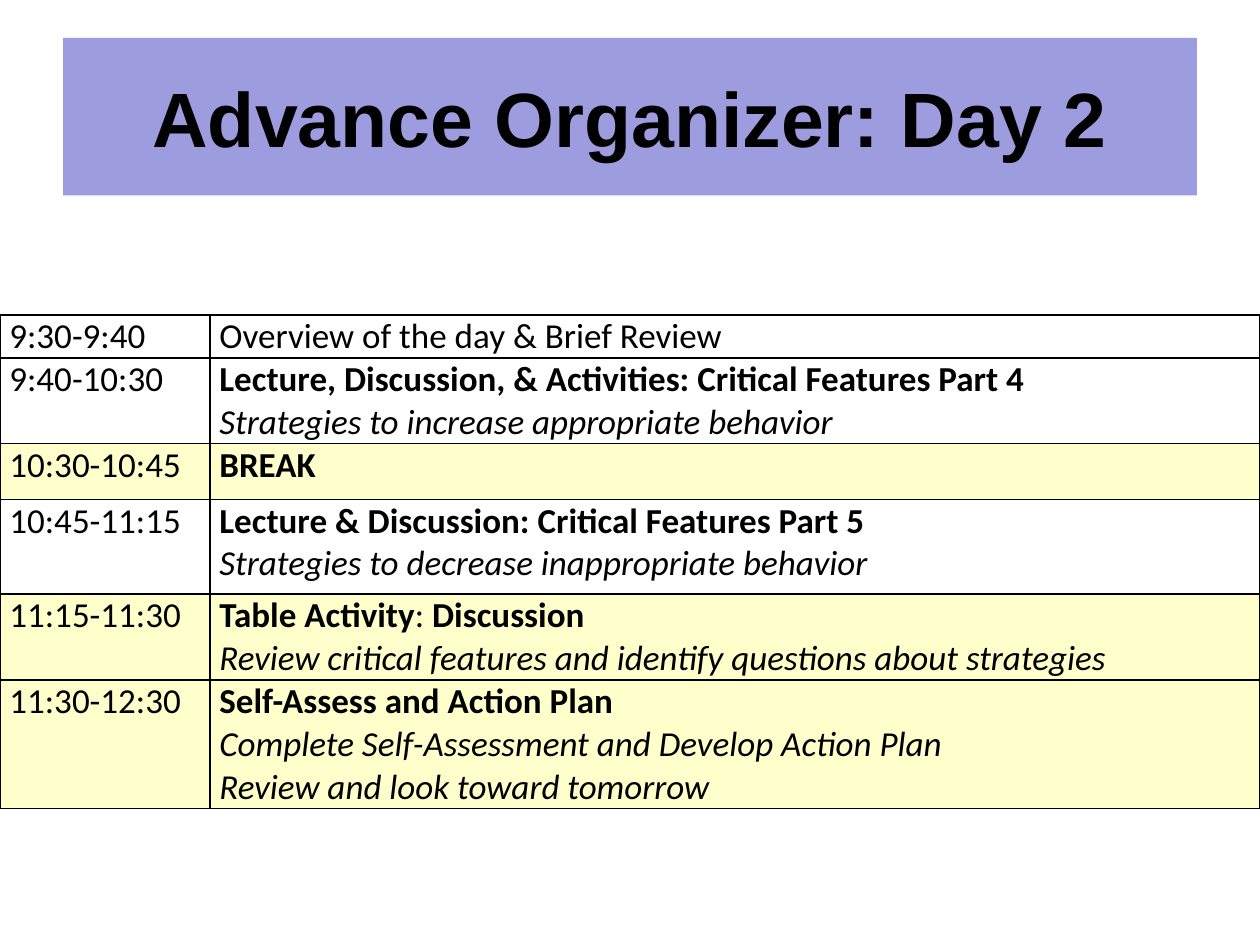
from dataclasses import dataclass

import pptx
import pptx.dml.color
import pptx.enum.text
import pptx.oxml
import pptx.oxml.ns
import pptx.util

Pt = pptx.util.Pt
RGB = pptx.dml.color.RGBColor


@dataclass(frozen=True)
class Theme:
    ink: str = "000000"
    banner: str = "9C9CDF"
    highlight: str = "FFFFCC"
    title_font: str = "Arial"
    body_font: str = "Calibri"
    title_size: float = 44
    body_size: float = 20
    border: float = 1


@dataclass(frozen=True)
class Session:
    time: str
    heading: tuple[tuple[str, bool], ...]
    details: tuple[str, ...]
    height: float
    highlighted: bool = False


THEME = Theme()
COLUMNS = (120, 600)
TABLE_TOP, TABLE_HEIGHT = 180, 278
SESSIONS = (
    Session("9:30-9:40", (("Overview of the day & Brief Review", False),), (), 24),
    Session("9:40-10:30",
            (("Lecture, Discussion, & Activities: Critical Features Part 4", True),),
            ("Strategies to increase appropriate behavior",), 48),
    Session("10:30-10:45", (("BREAK", True),), (), 32, True),
    Session("10:45-11:15",
            (("Lecture & Discussion: Critical Features Part 5", True),),
            ("Strategies to decrease inappropriate behavior",), 54),
    Session("11:15-11:30",
            (("Table Activity", True), (": ", False), ("Discussion", True)),
            ("Review critical features and identify questions about strategies",), 36, True),
    Session("11:30-12:30", (("Self-Assess and Action Plan", True),),
            ("Complete Self-Assessment and Develop Action Plan",
             "Review and look toward tomorrow"), 32, True),
)


def add_text(p, text: str, *, font: str = THEME.body_font, size: float = THEME.body_size,
             bold: bool = False, italic: bool = False) -> None:
    r = p.add_run()
    r.text = text
    r.font.name = font
    r.font.size = Pt(size)
    r.font.bold = bold
    r.font.italic = italic
    r.font.color.rgb = RGB.from_string(THEME.ink)


def add_title(s, text: str) -> None:
    sp = s.shapes.title
    sp.left, sp.top, sp.width, sp.height = Pt(36), Pt(21.6), Pt(648), Pt(90)
    sp.fill.solid()
    sp.fill.fore_color.rgb = RGB.from_string(THEME.banner)
    tf = sp.text_frame
    tf.auto_size = pptx.enum.text.MSO_AUTO_SIZE.NONE
    tf.vertical_anchor = pptx.enum.text.MSO_ANCHOR.MIDDLE
    p = tf.paragraphs[0]
    p.alignment = pptx.enum.text.PP_ALIGN.CENTER
    add_text(p, text, font=THEME.title_font, size=THEME.title_size, bold=True)


def format_cell(cell, highlighted: bool) -> None:
    cell.margin_left = cell.margin_right = Pt(5.4)
    cell.margin_top = cell.margin_bottom = Pt(0)
    props = cell._tc.get_or_add_tcPr()
    for side in ("lnL", "lnR", "lnT", "lnB"):
        props.append(pptx.oxml.parse_xml(
            f'<a:{side} {pptx.oxml.ns.nsdecls("a")} w="{Pt(THEME.border)}">'
            f'<a:solidFill><a:srgbClr val="{THEME.ink}"/></a:solidFill></a:{side}>'))
    if highlighted:
        cell.fill.solid()
        cell.fill.fore_color.rgb = RGB.from_string(THEME.highlight)
    else:
        cell.fill.background()


def fill_row(row, session: Session) -> None:
    row.height = Pt(session.height)
    time, topic = row.cells
    for cell in (time, topic):
        format_cell(cell, session.highlighted)
    add_text(time.text_frame.paragraphs[0], session.time)
    tf = topic.text_frame
    for text, bold in session.heading:
        add_text(tf.paragraphs[0], text, bold=bold)
    for detail in session.details:
        add_text(tf.add_paragraph(), detail, italic=True)


def add_schedule(s, sessions: tuple[Session, ...]) -> None:
    frame = s.shapes.add_table(len(sessions), len(COLUMNS), Pt(0), Pt(TABLE_TOP),
                               Pt(sum(COLUMNS)), Pt(TABLE_HEIGHT))
    table = frame.table
    table.first_row = table.horz_banding = False
    for column, width in zip(table.columns, COLUMNS):
        column.width = Pt(width)
    for row, session in zip(table.rows, sessions):
        fill_row(row, session)
    frame.height = Pt(TABLE_HEIGHT)


def main() -> None:
    prs = pptx.Presentation()
    prs.slide_width, prs.slide_height = Pt(720), Pt(540)
    s = prs.slides.add_slide(prs.slide_layouts[5])
    add_title(s, "Advance Organizer: Day 2")
    add_schedule(s, SESSIONS)
    prs.save("out.pptx")


if __name__ == "__main__":
    main()
